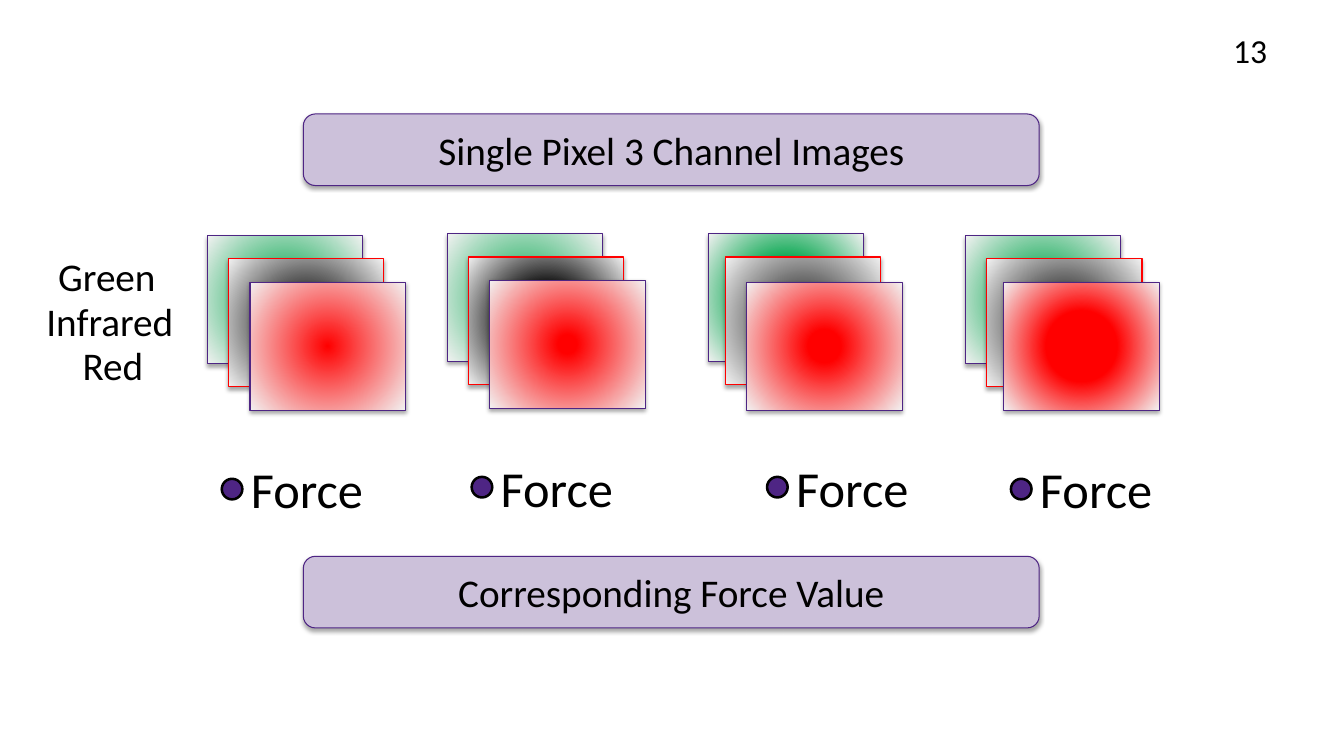
from lxml import etree
from pptx import Presentation
from pptx.dml.color import RGBColor
from pptx.enum.shapes import MSO_SHAPE as SHAPE
from pptx.enum.text import MSO_ANCHOR as ANCHOR, PP_ALIGN as ALIGN
from pptx.oxml import parse_xml
from pptx.oxml.ns import nsdecls, qn
from pptx.util import Pt

BLACK = RGBColor(0x00, 0x00, 0x00)
PURPLE = RGBColor(0x4E, 0x25, 0x84)
LAVENDER = RGBColor(0xCC, 0xC1, 0xDA)
GREEN = RGBColor(0x00, 0xA5, 0x4B)
INFRARED = RGBColor(0x0D, 0x0D, 0x0D)
RED = RGBColor(0xFF, 0x00, 0x00)
PALE = RGBColor(0xF2, 0xF2, 0xF2)

CHANNELS = [(GREEN, PURPLE), (INFRARED, RED), (RED, PURPLE)]  # centre, outline
CARD_W, CARD_H = 110.9, 91.4

# Card lefts, card tops, solid centre of each channel (%), force label left and top
SAMPLES = [
    ((148.3, 163.4, 178.6), (168.5, 185, 201.6), (9, 16, 0), 128.9, 324),
    ((319.7, 334.8, 349.9), (167, 183.6, 200.2), (0, 35, 9), 307.4, 322.6),
    ((506.2, 518.4, 533.5), (167, 183.6, 201.6), (35, 0, 16), 518.4, 322.6),
    ((689.8, 704.9, 717.1), (168.5, 185, 201.6), (16, 9, 35), 692.6, 324),
]


def write(tf, text, size, align=ALIGN.CENTER, anchor=ANCHOR.TOP):
    tf.word_wrap = True
    tf.vertical_anchor = anchor
    p = tf.paragraphs[0]
    p.text = text
    p.alignment = align
    p.font.name = "Calibri"
    p.font.size = Pt(size)
    p.font.color.rgb = BLACK


def add_label(s, text, x, y, w, h, size, **layout):
    box = s.shapes.add_textbox(Pt(x), Pt(y), Pt(w), Pt(h))
    write(box.text_frame, text, size, **layout)


def add_outlined(s, kind, x, y, w, h, line, weight=0.75):
    sp = s.shapes.add_shape(kind, Pt(x), Pt(y), Pt(w), Pt(h))
    sp.shadow.inherit = False
    sp.line.color.rgb = line
    sp.line.width = Pt(weight)
    return sp


def add_shadow(sp):
    effects = sp._element.spPr.find(qn("a:effectLst"))
    effects.append(parse_xml(
        f'<a:outerShdw {nsdecls("a")} blurRad="{Pt(3.1)}" dist="{Pt(1.8)}" '
        'dir="5400000" rotWithShape="0"><a:srgbClr val="000000">'
        '<a:alpha val="35000"/></a:srgbClr></a:outerShdw>'))


def set_radial_fill(sp, centre, solid):
    sp.fill.gradient()
    stops = sp.fill.gradient_stops
    for stop, color, position in zip(stops, (centre, PALE), (solid / 100, 1)):
        stop.color.rgb = color
        stop.position = position
    grad = sp._element.spPr.find(qn("a:gradFill"))
    grad.remove(grad.find(qn("a:lin")))
    radial = etree.SubElement(grad, qn("a:path"), path="circle")
    etree.SubElement(radial, qn("a:fillToRect"),
                     l="50000", t="50000", r="50000", b="50000")


def add_banner(s, text, y):
    sp = add_outlined(s, SHAPE.ROUNDED_RECTANGLE, 216.7, y, 525.6, 51.1, PURPLE)
    sp.fill.solid()
    sp.fill.fore_color.rgb = LAVENDER
    add_shadow(sp)
    write(sp.text_frame, text, 28, anchor=ANCHOR.MIDDLE)


def add_card_stack(s, lefts, tops, solids):
    for x, y, solid, (centre, line) in zip(lefts, tops, solids, CHANNELS):
        sp = add_outlined(s, SHAPE.RECTANGLE, x, y, CARD_W, CARD_H, line)
        set_radial_fill(sp, centre, solid)
        add_shadow(sp)


def add_force(s, x, y):
    dot = add_outlined(s, SHAPE.OVAL, x + 29.5, y + 18, 14.7, 14.7, BLACK, 1.8)
    dot.fill.solid()
    dot.fill.fore_color.rgb = PURPLE
    add_label(s, "Force", x, y, 180.7, 51.1, 36)


def main():
    prs = Presentation()
    prs.slide_width, prs.slide_height = Pt(960), Pt(540)
    s = prs.slides.add_slide(prs.slide_layouts[6])

    # Slide number
    add_label(s, "13", 688.3, 21.6, 223.9, 28.8, 24,
              align=ALIGN.RIGHT, anchor=ANCHOR.MIDDLE)

    # Headings above and below the samples
    add_banner(s, "Single Pixel 3 Channel Images", 81.4)
    add_banner(s, "Corresponding Force Value", 397.4)

    # Image stacks, each with its force value
    for lefts, tops, solids, force_x, force_y in SAMPLES:
        add_card_stack(s, lefts, tops, solids)
        add_force(s, force_x, force_y)

    # Channel names
    for i, name in enumerate(["Green", "Infrared", "Red"]):
        add_label(s, name, 16.6 + 2.15 * i, 176.4 + 32.1 * i, 119.5, 41, 28)

    prs.save("out.pptx")


if __name__ == "__main__":
    main()
